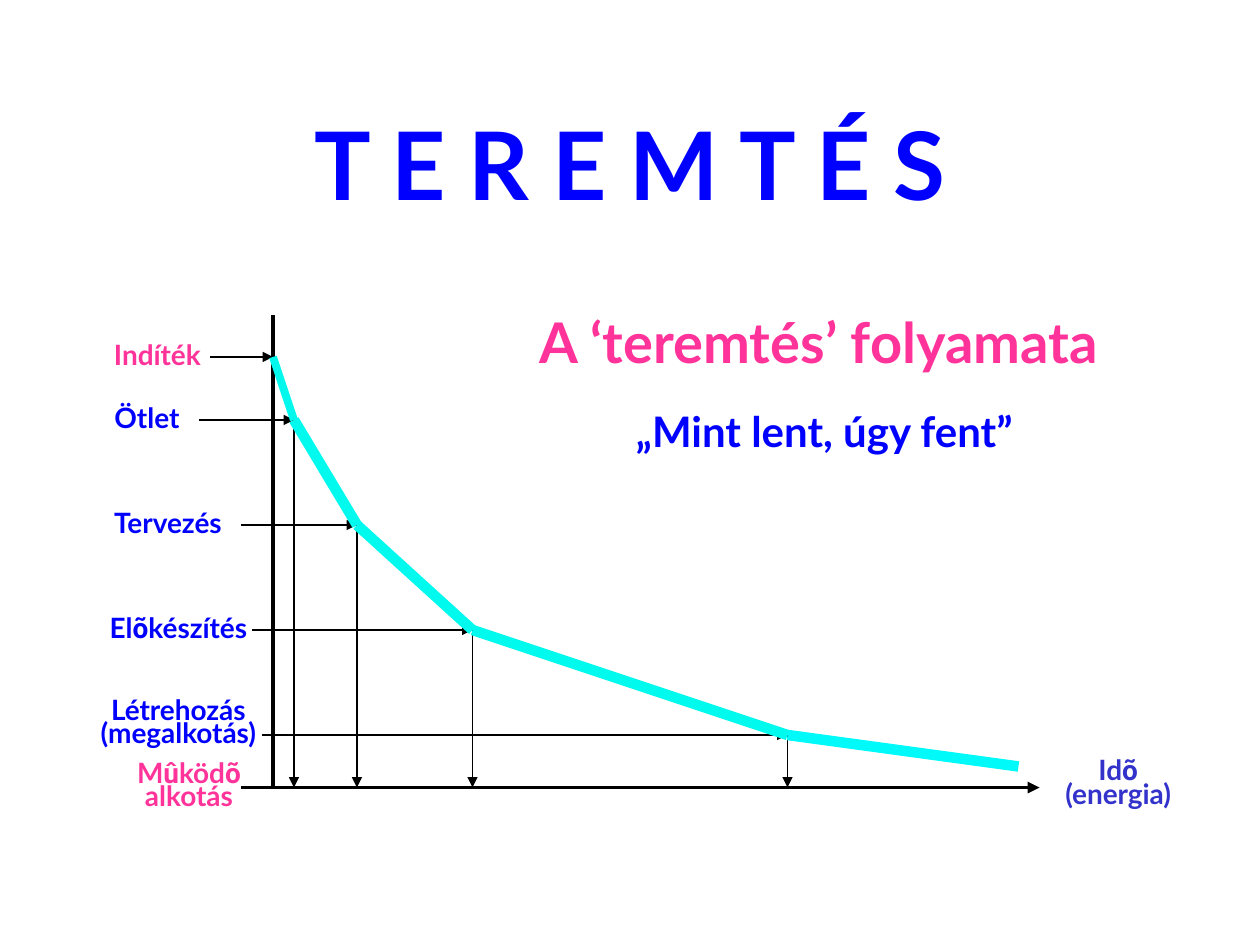
from dataclasses import dataclass
from itertools import groupby, pairwise

from pptx import Presentation
from pptx.dml.color import RGBColor
from pptx.enum.shapes import MSO_CONNECTOR
from pptx.enum.text import MSO_ANCHOR, PP_ALIGN
from pptx.oxml.ns import qn
from pptx.util import Emu, Pt
from lxml.etree import SubElement

PX = 7620  # EMU per px, 120 px to the inch


@dataclass(frozen=True)
class Theme:
    font: str = "Lato"
    accent_font: str = "Roboto"
    blue: str = "0000FF"
    pink: str = "FF3399"
    violet: str = "3333CC"
    black: str = "000000"
    curve_start: str = "02F8EC"
    curve: str = "00FAEE"
    curve_end: str = "00FAFA"
    title: int = 54
    heading: int = 32
    quote: int = 24
    label: int = 16


T = Theme()


def px(n):
    return Emu(n * PX)


def add_text(s, box, text, size, color, spacing=None, anchor=MSO_ANCHOR.TOP):
    """Add centred bold text; õ and û are set in the accent font."""
    tf = s.shapes.add_textbox(*map(px, box)).text_frame
    tf.word_wrap = True
    tf.vertical_anchor = anchor
    p = tf.paragraphs[0]
    p.alignment = PP_ALIGN.CENTER
    p.line_spacing = spacing
    for i, line in enumerate(text.split("\n")):
        if i:
            p.add_line_break()
        for accented, letters in groupby(line, lambda c: c in "õû"):
            r = p.add_run()
            r.text = "".join(letters)
            r.font.name = T.accent_font if accented else T.font
            r.font.size = Pt(size)
            r.font.bold = True
            r.font.color.rgb = RGBColor.from_string(color)


def add_line(s, start, end, width, color=T.black, arrow=False):
    line = s.shapes.add_connector(MSO_CONNECTOR.STRAIGHT, *map(px, (*start, *end)))
    line.line.width = Pt(width)
    line.line.color.rgb = RGBColor.from_string(color)
    sp_pr = line._element.spPr
    if arrow:
        SubElement(sp_pr.find(qn("a:ln")), qn("a:tailEnd"), type="triangle")
    SubElement(sp_pr, qn("a:effectLst"))


def add_headings(s, box):
    x, y, w, h = box
    add_text(s, (x, y, w, 76), "A ‘teremtés’ folyamata", T.heading, T.pink)
    add_text(s, (x + 80, y + 93, 410, 60), "„Mint lent, úgy fent”", T.quote, T.blue)


def add_process_chart(s, box):
    x, y, w, h = box
    axis_x, axis_y = x + 180, y + h

    # Label, label left, label width, arrow start, curve point, colour
    stages = [
        ("Indíték", 10, 120, 120, (180, 40), T.pink),
        ("Ötlet", 10, 100, 110, (200, 100), T.blue),
        ("Tervezés", 10, 140, 150, (260, 200), T.blue),
        ("Elõkészítés", 10, 160, 160, (370, 300), T.blue),
        ("Létrehozás\n(megalkotás)", 0, 180, 170, (670, 400), T.blue),
    ]
    add_line(s, (axis_x, y), (axis_x, axis_y), 2.25)
    points = []
    for label, left, width, start, (dx, dy), color in stages:
        point = (x + dx, y + dy)
        points.append(point)
        two_lines = "\n" in label
        top = point[1] - (38 if two_lines else 24)
        add_text(s, (x + left, top, width, 58 if two_lines else 44), label,
                 T.label, color, 0.7 if two_lines else None)
        add_line(s, (x + start, point[1]), point, 1, arrow=True)
        if point[0] > axis_x:
            add_line(s, point, (point[0], axis_y), 0.75, arrow=True)

    points.append((x + 890, y + 430))
    styles = [(4.5, T.curve_start), *[(6, T.curve)] * 3, (6, T.curve_end)]
    for (start, end), (width, color) in zip(pairwise(points), styles):
        add_line(s, start, end, width, color)

    add_line(s, (x + 150, axis_y), (x + 910, axis_y), 2.25, arrow=True)
    add_text(s, (x + 10, axis_y - 28, 180, 58), "Mûködõ alkotás",
             T.label, T.pink, 0.7)
    add_text(s, (x + 920, axis_y - 30, 130, 58), "Idõ\n(energia)",
             T.label, T.violet, 0.7)


def main():
    prs = Presentation()
    prs.slide_width, prs.slide_height = px(1200), px(900)
    s = prs.slides.add_slide(prs.slide_layouts[6])
    add_text(s, (90, 80, 1020, 150), "T E R E M T É S", T.title, T.blue,
             anchor=MSO_ANCHOR.MIDDLE)
    add_process_chart(s, (80, 300, 1050, 450))
    add_headings(s, (500, 287, 560, 153))
    prs.save("out.pptx")


if __name__ == "__main__":
    main()
